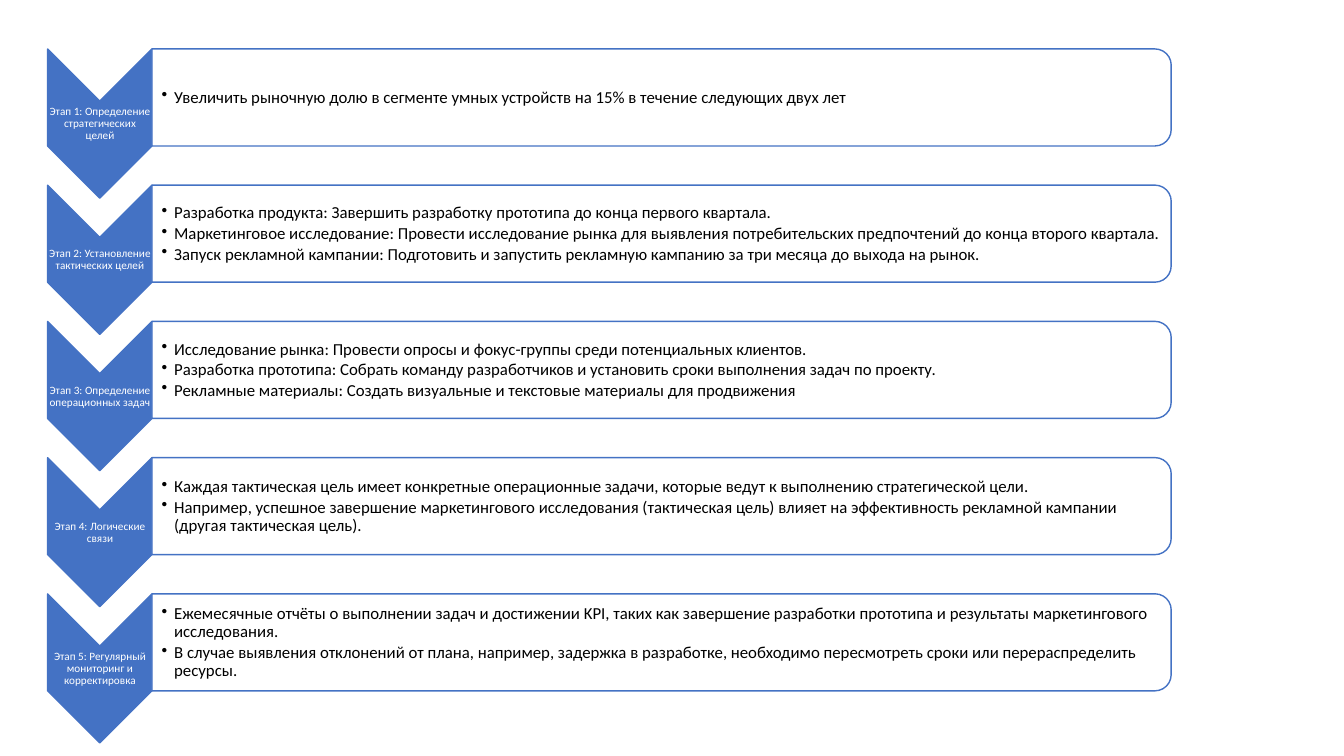
"""Build a slide with five planning stages, each a chevron beside a bulleted panel."""
from dataclasses import dataclass

from lxml import etree
from pptx import Presentation
from pptx import util as u
from pptx.dml.color import RGBColor
from pptx.enum import shapes, text
from pptx.oxml import ns

BLUE = RGBColor(0x44, 0x72, 0xC4)
WHITE = RGBColor(0xFF, 0xFF, 0xFF)
BLACK = RGBColor(0x00, 0x00, 0x00)
FONT = "Calibri"
STEP = 97.3


@dataclass(frozen=True)
class Box:
    left: float
    top: float
    width: float
    height: float

    def down(self, gap: float) -> "Box":
        return Box(self.left, self.top + gap, self.width, self.height)

    def edges(self) -> list:
        return [u.Pt(v) for v in (self.left, self.top, self.width, self.height)]


@dataclass(frozen=True)
class Style:
    size: float
    color: RGBColor
    after: float
    inset: float
    align: text.PP_ALIGN
    bullet: bool


@dataclass(frozen=True)
class Stage:
    title: str
    points: tuple[str, ...]


CHEVRON = Box(18, 51, 106.5, 74.5)
LABEL = Box(34.2, 72.6, 74.5, 32)
PANEL = Box(437.9, -294.4, 69.3, 728)
BODY = Box(108.7, 38.6, 724.6, 62.6)

TITLE = Style(8, WHITE, 2.8, 0.6, text.PP_ALIGN.CENTER, False)
POINT = Style(12, BLACK, 1.8, 6.72, text.PP_ALIGN.LEFT, True)

STAGES = (
    Stage("Этап 1: Определение стратегических целей", (
        "Увеличить рыночную долю в сегменте умных устройств на 15% в течение следующих двух лет",
    )),
    Stage("Этап 2: Установление тактических целей", (
        "Разработка продукта: Завершить разработку прототипа до конца первого квартала.",
        "Маркетинговое исследование: Провести исследование рынка для выявления "
        "потребительских предпочтений до конца второго квартала.",
        "Запуск рекламной кампании: Подготовить и запустить рекламную кампанию "
        "за три месяца до выхода на рынок.",
    )),
    Stage("Этап 3: Определение операционных задач", (
        "Исследование рынка: Провести опросы и фокус-группы среди потенциальных клиентов.",
        "Разработка прототипа: Собрать команду разработчиков и установить сроки "
        "выполнения задач по проекту.",
        "Рекламные материалы: Создать визуальные и текстовые материалы для продвижения",
    )),
    Stage("Этап 4: Логические связи", (
        "Каждая тактическая цель имеет конкретные операционные задачи, которые ведут "
        "к выполнению стратегической цели.",
        "Например, успешное завершение маркетингового исследования (тактическая цель) "
        "влияет на эффективность рекламной кампании (другая тактическая цель).",
    )),
    Stage("Этап 5: Регулярный мониторинг и корректировка", (
        "Ежемесячные отчёты о выполнении задач и достижении KPI, таких как завершение "
        "разработки прототипа и результаты маркетингового исследования.",
        "В случае выявления отклонений от плана, например, задержка в разработке, "
        "необходимо пересмотреть сроки или перераспределить ресурсы.",
    )),
)


def add_form(slide, kind: shapes.MSO_SHAPE, box: Box, fill: RGBColor):
    form = slide.shapes.add_shape(kind, *box.edges())
    form.rotation = 90
    form.shadow.inherit = False
    form.fill.solid()
    form.fill.fore_color.rgb = fill
    form.line.color.rgb = BLUE
    form.line.width = u.Pt(1)
    return form


def set_alpha(form, percent: int) -> None:
    color = form.fill._xPr.find(ns.qn("a:solidFill"))[0]
    etree.SubElement(color, ns.qn("a:alpha"), val=str(percent * 1000))


def set_bullet(para) -> None:
    para.level = 1
    props = para._p.get_or_add_pPr()
    props.set("marL", str(u.Pt(9)))
    props.set("indent", str(u.Pt(-9)))
    etree.SubElement(props, ns.qn("a:buChar"), char="•")


def add_text(slide, box: Box, lines: tuple[str, ...], style: Style) -> None:
    frame = slide.shapes.add_textbox(*box.edges()).text_frame
    frame.word_wrap = True
    frame.vertical_anchor = text.MSO_ANCHOR.MIDDLE
    frame.margin_left = u.Pt(style.inset)
    frame.margin_top = frame.margin_right = frame.margin_bottom = u.Pt(0.6)
    for i, line in enumerate(lines):
        para = frame.add_paragraph() if i else frame.paragraphs[0]
        para.alignment = style.align
        para.line_spacing = 0.9
        para.space_after = u.Pt(style.after)
        if style.bullet:
            set_bullet(para)
        run = para.add_run()
        run.text = line
        run.font.name = FONT
        run.font.size = u.Pt(style.size)
        run.font.color.rgb = style.color


def add_stage(slide, stage: Stage, gap: float) -> None:
    add_form(slide, shapes.MSO_SHAPE.CHEVRON, CHEVRON.down(gap), BLUE)
    add_text(slide, LABEL.down(gap), (stage.title,), TITLE)
    kind = shapes.MSO_SHAPE.ROUND_2_SAME_RECTANGLE
    set_alpha(add_form(slide, kind, PANEL.down(gap), WHITE), 90)
    add_text(slide, BODY.down(gap), stage.points, POINT)


def main() -> None:
    deck = Presentation()
    deck.slide_width, deck.slide_height = u.Pt(960), u.Pt(540)
    slide = deck.slides.add_slide(deck.slide_layouts[6])
    for i, stage in enumerate(STAGES):
        add_stage(slide, stage, i * STEP)
    deck.save("out.pptx")


if __name__ == "__main__":
    main()
